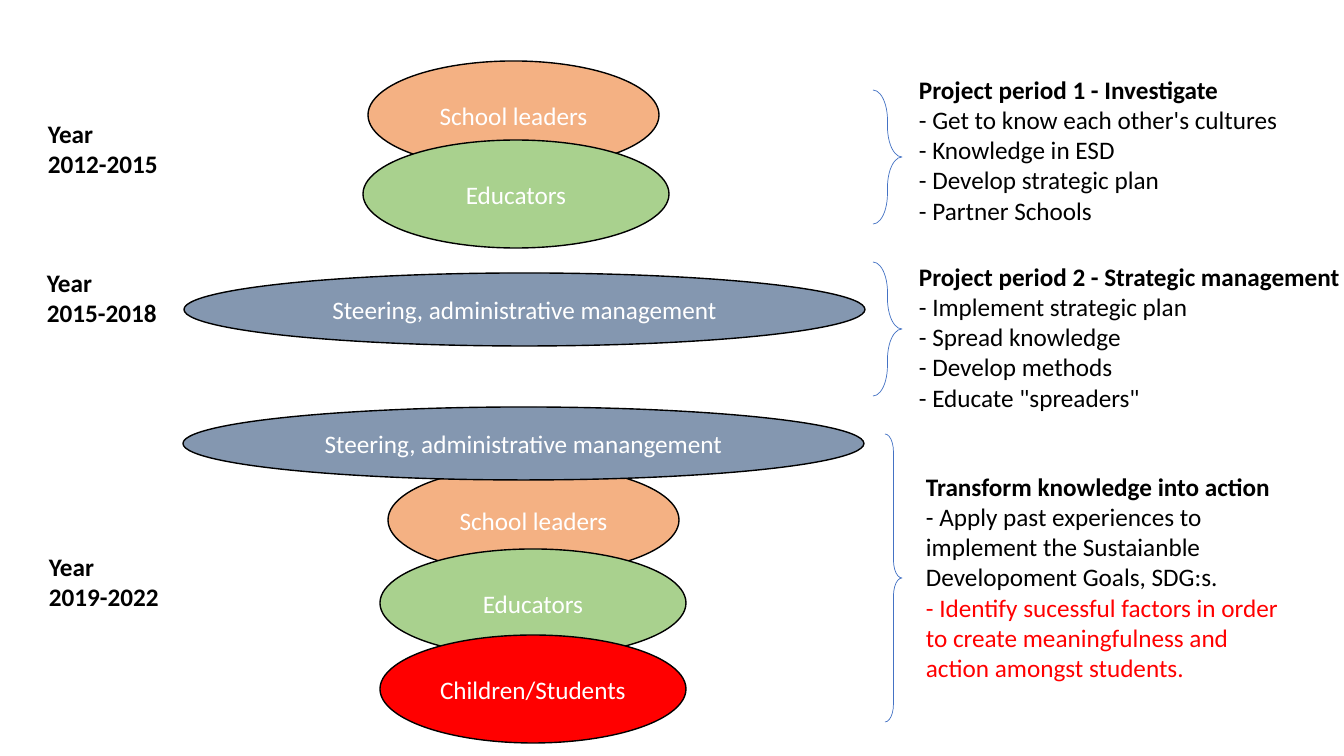
import pptx
import pptx.util
import pptx.dml.color
import pptx.enum.shapes
import pptx.enum.text

RGB = pptx.dml.color.RGBColor
SHAPE = pptx.enum.shapes.MSO_SHAPE
TEXT = pptx.enum.text

BLACK = RGB(0x00, 0x00, 0x00)
WHITE = RGB(0xFF, 0xFF, 0xFF)
RED = RGB(0xFF, 0x00, 0x00)
BLUE = RGB(0x44, 0x72, 0xC4)
PEACH = RGB(0xF4, 0xB1, 0x83)
GREEN = RGB(0xA9, 0xD1, 0x8E)
SLATE = RGB(0x84, 0x97, 0xB0)

WIDE, HIGH = 1344, 756
SCALE = 12192000 / WIDE

LEAD = (291, 108, PEACH)
TEACH = (306, 108, GREEN)
STEER = (681, 73, SLATE)
CHILD = (306, 108, RED)

GROUPS = [
    ("School leaders", 368, 61, LEAD),
    ("Educators", 363, 140, TEACH),
    ("Steering, administrative management", 184, 273, STEER),
    ("School leaders", 388, 466, LEAD),
    ("Steering, administrative manangement", 183, 407, STEER),
    ("Educators", 380, 549, TEACH),
    ("Children/Students", 380, 635, CHILD),
]

YEARS = [
    ("2012-2015", 38, 113),
    ("2015-2018", 37, 262),
    ("2019-2022", 39, 546),
]

GOALS = [
    ((909, 69, 383, 163), False, [
        ("Project period 1 - Investigate", BLACK),
        ("- Get to know each other's cultures", BLACK),
        ("- Knowledge in ESD", BLACK),
        ("- Develop strategic plan", BLACK),
        ("- Partner Schools", BLACK),
    ]),
    ((909, 256, 445, 163), False, [
        ("Project period 2 - Strategic management", BLACK),
        ("- Implement strategic plan", BLACK),
        ("- Spread knowledge", BLACK),
        ("- Develop methods", BLACK),
        ("- Educate \"spreaders\"", BLACK),
    ]),
    ((916, 466, 383, 224), True, [
        ("Transform knowledge into action", BLACK),
        ("- Apply past experiences to implement the Sustaianble "
         "Developoment Goals, SDG:s.", BLACK),
        ("- Identify sucessful factors in order to create "
         "meaningfulness and action amongst students.", RED),
    ]),
]

BRACES = [(873, 262, 29, 134), (873, 90, 29, 134), (885, 434, 17, 288)]


def px(*sizes):
    return [pptx.util.Emu(round(size * SCALE)) for size in sizes]


def style(para, color, bold=False):
    for run in para.runs:
        run.font.name = "Calibri"
        run.font.size = pptx.util.Pt(18)
        run.font.bold = bold
        run.font.color.rgb = color


def add_shape(slide, kind, box, color, width):
    shape = slide.shapes.add_shape(kind, *px(*box))
    shape.shadow.inherit = False
    shape.line.color.rgb = color
    shape.line.width = pptx.util.Pt(width)
    return shape


def add_group(slide, label, left, top, kind):
    wide, high, fill = kind
    oval = add_shape(slide, SHAPE.OVAL, (left, top, wide, high), BLACK, 1)
    oval.fill.solid()
    oval.fill.fore_color.rgb = fill
    frame = oval.text_frame
    frame.text = label
    frame.word_wrap = True
    frame.vertical_anchor = TEXT.MSO_ANCHOR.MIDDLE
    frame.paragraphs[0].alignment = TEXT.PP_ALIGN.CENTER
    style(frame.paragraphs[0], WHITE)


def add_text(slide, box, wrap, lines):
    frame = slide.shapes.add_textbox(*px(*box)).text_frame
    frame.text = "\n".join(text for text, color, bold in lines)
    frame.word_wrap = wrap
    frame.auto_size = TEXT.MSO_AUTO_SIZE.SHAPE_TO_FIT_TEXT
    for para, (text, color, bold) in zip(frame.paragraphs, lines):
        style(para, color, bold)


def add_brace(slide, box):
    brace = add_shape(slide, SHAPE.RIGHT_BRACE, box, BLUE, 0.5)
    brace.fill.background()
    brace.adjustments[0] = 1.05
    brace.adjustments[1] = 0.5


def main():
    deck = pptx.Presentation()
    deck.slide_width, deck.slide_height = px(WIDE, HIGH)
    slide = deck.slides.add_slide(deck.slide_layouts[6])
    for group in GROUPS:
        add_group(slide, *group)
    for span, left, top in YEARS:
        lines = [(text, BLACK, True) for text in ("Year", span)]
        add_text(slide, (left, top, 131, 72), False, lines)
    for box, wrap, goals in GOALS:
        lines = [(text, color, row == 0)
                 for row, (text, color) in enumerate(goals)]
        add_text(slide, box, wrap, lines)
    for box in BRACES:
        add_brace(slide, box)
    deck.save("out.pptx")


if __name__ == "__main__":
    main()
